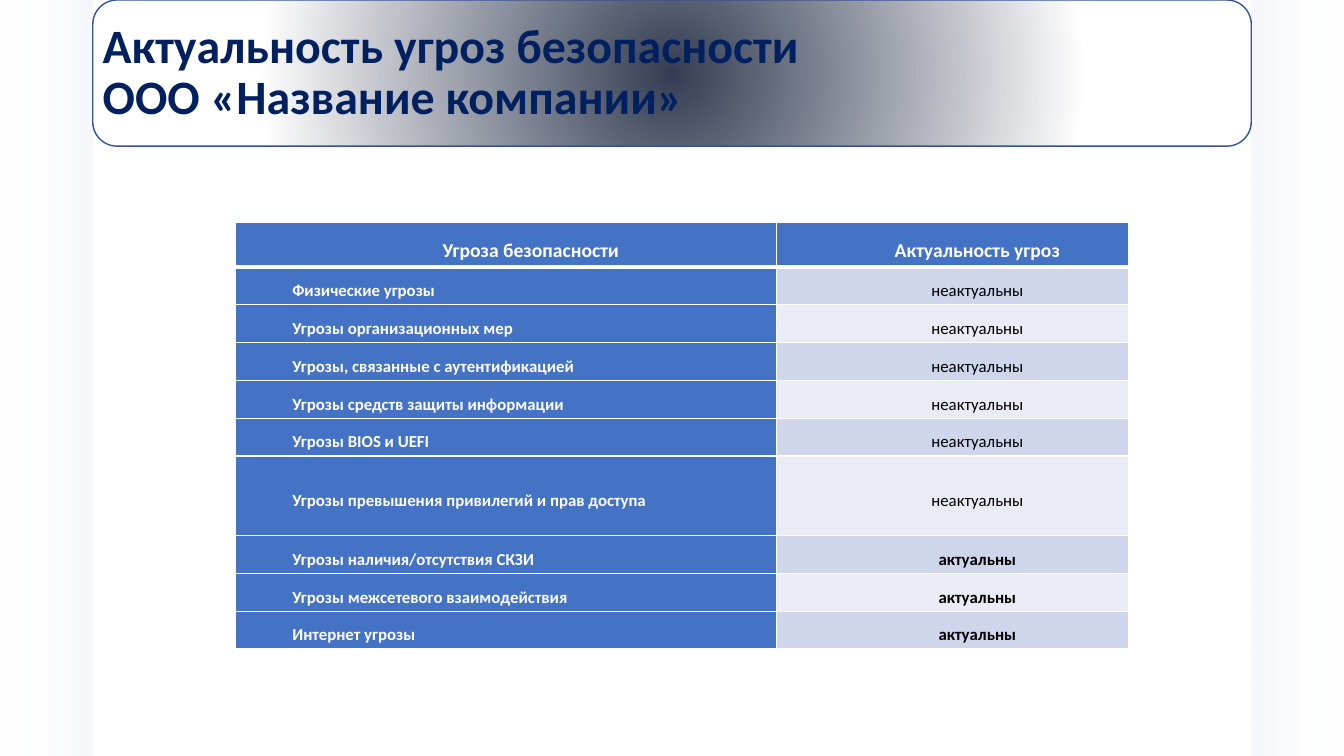
from lxml import etree
from pptx import Presentation, oxml, util as u
from pptx.dml.color import RGBColor
from pptx.enum import shapes, text

NAVY = RGBColor(0x00, 0x20, 0x60)
EDGE = RGBColor(0x32, 0x54, 0x91)
BLUE = RGBColor(0x44, 0x72, 0xC4)
BANDS = [RGBColor(0xCF, 0xD5, 0xEA), RGBColor(0xE9, 0xEB, 0xF5)]
WHITE = RGBColor(0xFF, 0xFF, 0xFF)
BLACK = RGBColor(0x00, 0x00, 0x00)
NS = 'xmlns:a="http://schemas.openxmlformats.org/drawingml/2006/main"'
LINEAR = '<a:lin ang="10800000" scaled="0"/>'
RADIAL = ('<a:path path="circle"><a:fillToRect l="50000" t="50000" '
          'r="50000" b="50000"/></a:path>')
FADE = ('<a:gs pos="0"><a:srgbClr val="F6F8FC"/></a:gs><a:gs pos="100000">'
        '<a:srgbClr val="FFFFFF"><a:alpha val="0"/></a:srgbClr></a:gs>')
GLOW = ('<a:gs pos="0"><a:srgbClr val="343D53"/></a:gs>'
        '<a:gs pos="71000"><a:srgbClr val="FFFFFF"/></a:gs>')


def panel(kind, left, width, height, stops, way):
    """Add a shape at the top edge with a gradient fill."""
    box = slide.shapes.add_shape(kind, left, 0, width, height)
    box.shadow.inherit = False
    box.line.fill.background()
    grad = oxml.parse_xml(f'<a:gradFill {NS} rotWithShape="1"><a:gsLst>{stops}'
                          f'</a:gsLst>{way}</a:gradFill>')
    box.element.spPr.prstGeom.addnext(grad)
    return box


def write(para, words, size, color, bold):
    run = para.add_run()
    run.text = words
    font = run.font
    font.name, font.size, font.bold = "Calibri", u.Pt(size), bold
    font.color.rgb = color


deck = Presentation()
deck.slide_width, deck.slide_height = u.Inches(13.33), u.Inches(7.5)
slide = deck.slides.add_slide(deck.slide_layouts[6])
wide, high = deck.slide_width, deck.slide_height
side = u.Inches(0.92)
inner = wide - 2 * side

# Side fades and title banner
rect = shapes.MSO_SHAPE.RECTANGLE
panel(rect, 0, side, high, FADE, LINEAR)
panel(rect, wide - side, side, high, FADE, LINEAR).rotation = 180
banner = panel(shapes.MSO_SHAPE.ROUNDED_RECTANGLE, side, inner,
               u.Inches(1.45), GLOW, RADIAL)
banner.line.color.rgb = EDGE
banner.line.width = u.Pt(1)

title = slide.shapes.add_textbox(side, u.Inches(0.21), inner, u.Inches(1.04))
frame = title.text_frame
frame.word_wrap = True
frame.vertical_anchor = text.MSO_ANCHOR.MIDDLE
para = frame.paragraphs[0]
para.line_spacing = 0.9
write(para, "Актуальность угроз безопасности", 34.2, NAVY, True)
para.add_line_break()
write(para, "ООО «Название компании»", 34.2, NAVY, True)

# Threat table
no, yes = "неактуальны", "актуальны"
rows = [
    ("Угроза безопасности", "Актуальность угроз"),
    ("Физические угрозы", no),
    ("Угрозы организационных мер", no),
    ("Угрозы, связанные с аутентификацией", no),
    ("Угрозы средств защиты информации", no),
    ("Угрозы BIOS и UEFI", no),
    ("Угрозы превышения привилегий и прав доступа", no),
    ("Угрозы наличия/отсутствия СКЗИ", yes),
    ("Угрозы межсетевого взаимодействия", yes),
    ("Интернет угрозы", yes),
]
tall = {0: 0.44, 6: 0.79}
table = slide.shapes.add_table(len(rows), 2, u.Inches(2.33), u.Inches(2.21),
                               u.Inches(8.86), u.Inches(4.23)).table
for col, width in zip(table.columns, (5.37, 3.49)):
    col.width = u.Inches(width)

for r, row in enumerate(rows):
    table.rows[r].height = u.Inches(tall.get(r, 0.375))
    for c, words in enumerate(row):
        cell = table.cell(r, c)
        cell.margin_left = cell.margin_right = u.Inches(0.07)
        cell.margin_top = cell.margin_bottom = 0
        cell.vertical_anchor = text.MSO_ANCHOR.MIDDLE
        props = cell._tc.get_or_add_tcPr()
        for edge in "LRTB":
            thick = (r, edge) in ((0, "B"), (1, "T"))
            props.append(etree.fromstring(
                f'<a:ln{edge} {NS} w="{u.Pt(3 if thick else 1)}"><a:solidFill>'
                f'<a:srgbClr val="{WHITE}"/></a:solidFill></a:ln{edge}>',
                oxml.oxml_parser))
        head = r == 0
        value = c == 1 and not head
        cell.fill.solid()
        cell.fill.fore_color.rgb = BANDS[(r - 1) % 2] if value else BLUE
        para = cell.text_frame.paragraphs[0]
        para.line_spacing = 1.5
        para._p.get_or_add_pPr().set("marL", str(u.Inches(0.5)))
        if head or value:
            para.alignment = text.PP_ALIGN.CENTER
        write(para, words, 14 if head else 12, BLACK if value else WHITE,
              words != no)

deck.save("out.pptx")
